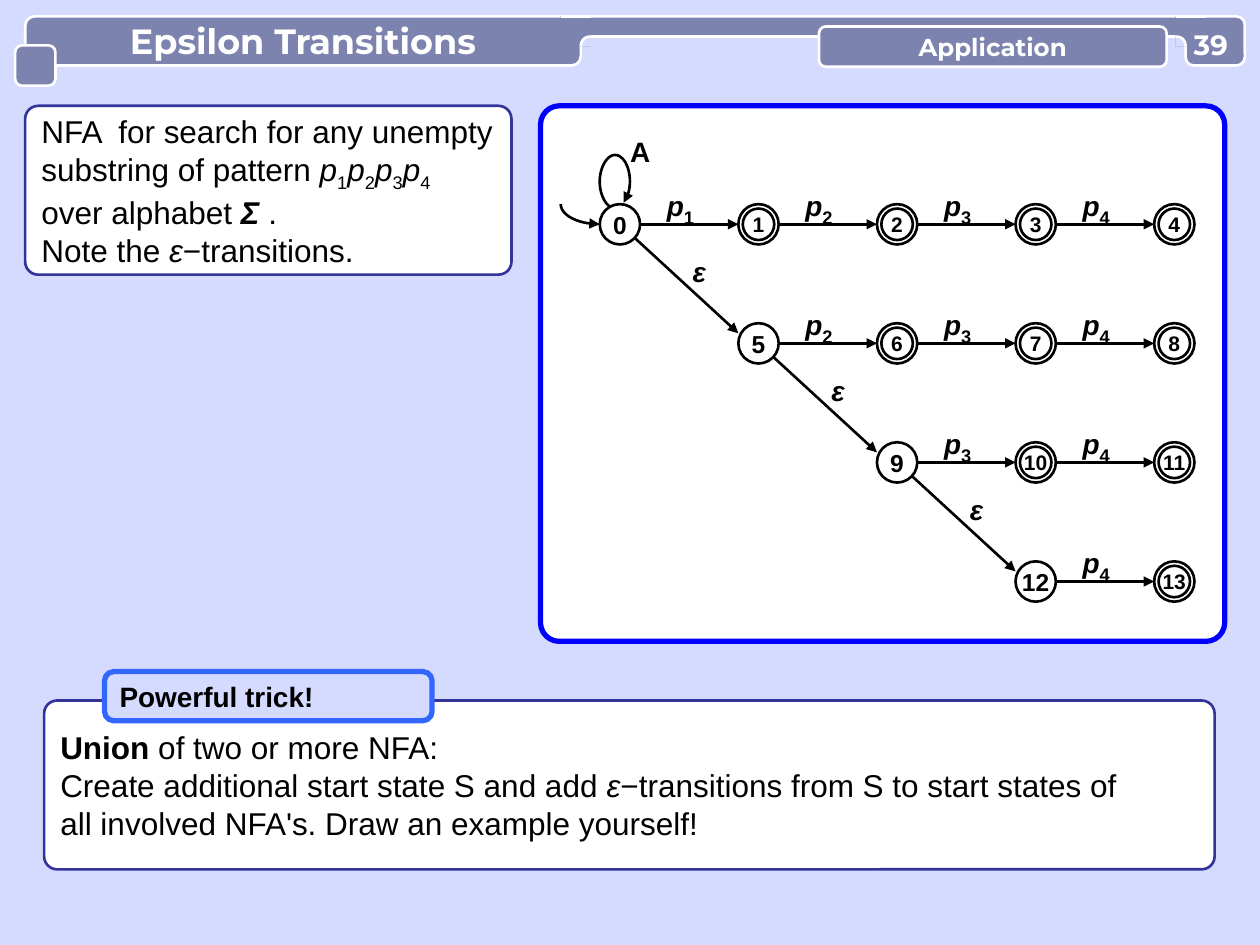
from lxml.etree import SubElement
from pptx import Presentation
from pptx.dml.color import RGBColor
from pptx.enum.shapes import MSO_CONNECTOR, MSO_SHAPE
from pptx.enum.text import MSO_ANCHOR, PP_ALIGN
from pptx.oxml.ns import qn
from pptx.util import Inches, Pt

# Content: a run is (text, style); b = bold, i = italic, s = subscript
PATTERN = [run for n in "1234" for run in (("p", "i"), (n, "s"))]
TASK = [
    [("NFA  for search for any unempty", "")],
    [("substring of pattern ", ""), *PATTERN],
    [("over alphabet ", ""), ("Σ ", "bi"), (".", "")],
    [("Note the ", ""), ("ε", "i"), ("−transitions.", "")],
]
UNION = [
    [("Union", "b"), (" of two or more NFA:", "")],
    [("Create additional start state S and add ", ""), ("ε", "i"),
     ("−transitions from S to start states of", "")],
    [("all involved NFA's. Draw an example yourself!", "")],
]
TRICK = [[("Powerful trick!", "b")]]
TITLE = [[("Epsilon Transitions", "b")]]
SECTION = [[("Application", "b")]]
NUMBER = [[("39", "b")]]
# Each row of states starts one column further right
STATES = [[0, 1, 2, 3, 4], [5, 6, 7, 8], [9, 10, 11], [12, 13]]

BLACK, WHITE, SLATE, SKY = "000000", "FFFFFF", "7D83AF", "D5DAFF"
NAVY, BLUE, AZURE = "333399", "0000FF", "3366FF"
LEFT, TOP, COLUMN, ROW = 4.92, 1.78, 1.1, 0.945  # centre of state 0, grid steps
RADIUS, INNER, LABEL = 0.16, 0.125, 0.32

deck = Presentation()
deck.slide_width, deck.slide_height = Inches(10), Inches(7.5)
page = deck.slides.add_slide(deck.slide_layouts[6])


def colour(value):
    return RGBColor.from_string(value)


page.background.fill.solid()
page.background.fill.fore_color.rgb = colour(SKY)


def paint(shape, fill=None, line=None, width=1.5):
    shape.shadow.inherit = False
    if fill:
        shape.fill.solid()
        shape.fill.fore_color.rgb = colour(fill)
    else:
        shape.fill.background()
    if line:
        shape.line.color.rgb = colour(line)
        shape.line.width = Pt(width)
    else:
        shape.line.fill.background()


def add_arrowhead(shape):
    SubElement(shape.line._get_or_add_ln(), qn("a:tailEnd"), type="triangle")


def write(shape, paragraphs, size, ink=BLACK, font="Arial", centred=False,
          tight=False, anchor=MSO_ANCHOR.MIDDLE, sub_size=None):
    frame = shape.text_frame
    frame.word_wrap = tight
    frame.vertical_anchor = anchor
    if tight:
        frame.margin_left = frame.margin_right = 0
        frame.margin_top = frame.margin_bottom = 0
    for index, runs in enumerate(paragraphs):
        para = frame.add_paragraph() if index else frame.paragraphs[0]
        para.alignment = PP_ALIGN.CENTER if centred else PP_ALIGN.LEFT
        para.font.size, para.font.name = Pt(size), font
        para.font.color.rgb = colour(ink)
        for text, style in runs:
            span = para.add_run()
            span.text = text
            span.font.bold, span.font.italic = "b" in style, "i" in style
            if "s" in style:
                span._r.get_or_add_rPr().set("baseline", "-25000")
                if sub_size:
                    span.font.size = Pt(sub_size)


def add_box(kind, left, top, width, height, fill=None, line=None, weight=1.5, corner=None):
    box = page.shapes.add_shape(kind, *map(Inches, (left, top, width, height)))
    if corner is not None:
        box.adjustments[0] = corner
    paint(box, fill, line, weight)
    return box


def add_panel(*place, **look):
    return add_box(MSO_SHAPE.ROUNDED_RECTANGLE, *place, **look)


def add_disc(x, y, radius):
    return add_box(MSO_SHAPE.OVAL, x - radius, y - radius, 2 * radius, 2 * radius, WHITE, BLACK)


def add_label(left, top, runs, fill=WHITE):
    box = add_box(MSO_SHAPE.RECTANGLE, left, top, LABEL, LABEL, fill)
    write(box, [runs], 16, centred=True, tight=True, anchor=MSO_ANCHOR.TOP, sub_size=18)
    box.text_frame.paragraphs[0].space_before = Pt(3)


def add_line(x1, y1, x2, y2, ink=BLACK, arrow=True):
    line = page.shapes.add_connector(MSO_CONNECTOR.STRAIGHT, *map(Inches, (x1, y1, x2, y2)))
    line.line.color.rgb = colour(ink)
    line.line.width = Pt(1.5)
    if arrow:
        add_arrowhead(line)
    SubElement(line._element.spPr, qn("a:effectLst"))


def bezier(a, b, c, d, steps=12):
    for t in (step / steps for step in range(steps + 1)):
        u = 1 - t
        yield tuple(u**3 * p + 3 * u * u * t * q + 3 * u * t * t * r + t**3 * s
                    for p, q, r, s in zip(a, b, c, d))


def add_outline(points, fill=None, line=None, closed=False):
    points = [(Inches(x), Inches(y)) for x, y in points]
    builder = page.shapes.build_freeform(*points[0])
    builder.add_line_segments(points[1:], close=closed)
    shape = builder.convert_to_shape()
    paint(shape, fill, line)
    return shape


def add_curved_arrow(knots):
    """Join cubic curves: a start point, then three points per curve."""
    points = [knots[0]]
    for i in range(0, len(knots) - 1, 3):
        points += list(bezier(*knots[i:i + 4]))[1:]
    add_arrowhead(add_outline(points, line=BLACK))


# Task and diagram panels
write(add_panel(0.2, 0.84, 3.86, 1.34, fill=WHITE, line=NAVY, corner=0.077), TASK, 18)
add_panel(4.29, 0.84, 5.43, 4.25, fill=WHITE, line=BLUE, weight=3, corner=0.035)

# Loop and start arrow of state 0
add_label(LEFT, 1.07, [("A", "b")])
add_curved_arrow([(4.88, 1.66), (4.82, 1.65), (4.76, 1.56), (4.76, 1.44),
                  (4.76, 1.33), (4.82, 1.23), (4.88, 1.23),
                  (4.95, 1.23), (5, 1.33), (5, 1.44),
                  (5, 1.51), (4.98, 1.57), (4.95, 1.61)])
add_curved_arrow([(4.45, 1.62), (4.45, 1.71), (4.59, 1.78), (4.76, 1.78)])

# Automaton: transitions first, states on top of them
for row, states in enumerate(STATES):
    y = TOP + row * ROW
    start = LEFT + row * COLUMN
    if row < len(STATES) - 1:
        add_line(start, y, start + COLUMN - RADIUS, y + ROW - RADIUS / 2)
        add_label(start + 0.47, y + 0.24, [("ε", "bi")], fill=None)
    for step, state in enumerate(states):
        x = start + step * COLUMN
        if step < len(states) - 1:
            symbol = str(row + step + 1)
            add_label(x + 0.32, y - 0.31, [("p", "bi"), (symbol, "bs")])
            add_line(x + RADIUS, y, x + COLUMN - RADIUS, y)
        disc = add_disc(x, y, RADIUS)
        if step:  # accepting state
            disc = add_disc(x, y, INNER)
        write(disc, [[(str(state), "b")]], 12 if step else 14, centred=True)

# Header tabs
header = dict(fill=SLATE, line=WHITE)
heading = dict(ink=WHITE, font="Montserrat", centred=True)
write(add_panel(0.2, 0.13, 4.41, 0.39, corner=0.188, **header), TITLE, 20, **heading)
add_panel(4.61, 0.13, 4.88, 0.16, corner=0.5, **header)
add_panel(0.12, 0.36, 0.32, 0.32, corner=0.17, **header)
add_panel(9.41, 0.13, 0.47, 0.39, corner=0.17, **header)

# Rounded joints between the tabs and the bar
for x, side in ((4.61, 1), (9.41, -1)):
    outer, inner = x - 0.16 * side, x + 0.08 * side
    add_box(MSO_SHAPE.RECTANGLE, min(outer, inner), 0.13, 0.24, 0.24, SLATE)
    add_line(outer, 0.13, inner, 0.13, WHITE, arrow=False)
    arc = list(bezier((inner, 0.29), (x + 0.03 * side, 0.29), (x, 0.32), (x, 0.37)))
    add_outline(arc + [(inner, 0.37)], fill=SKY, closed=True)
    add_outline(arc, line=WHITE)

write(add_panel(6.5, 0.21, 2.76, 0.32, corner=0.17, **header), SECTION, 14, **heading)
number_box = page.shapes.add_textbox(*map(Inches, (9.41, 0.22, 0.4, 0.27)))
write(number_box, NUMBER, 16, tight=True, **heading)

# Union panel with its tab
write(add_panel(0.35, 5.56, 9.29, 1.34, fill=WHITE, line=NAVY, corner=0.077), UNION, 18)
write(add_panel(0.83, 5.33, 2.6, 0.39, fill=SKY, line=AZURE, weight=3, corner=0.188), TRICK, 16)

deck.save("out.pptx")
